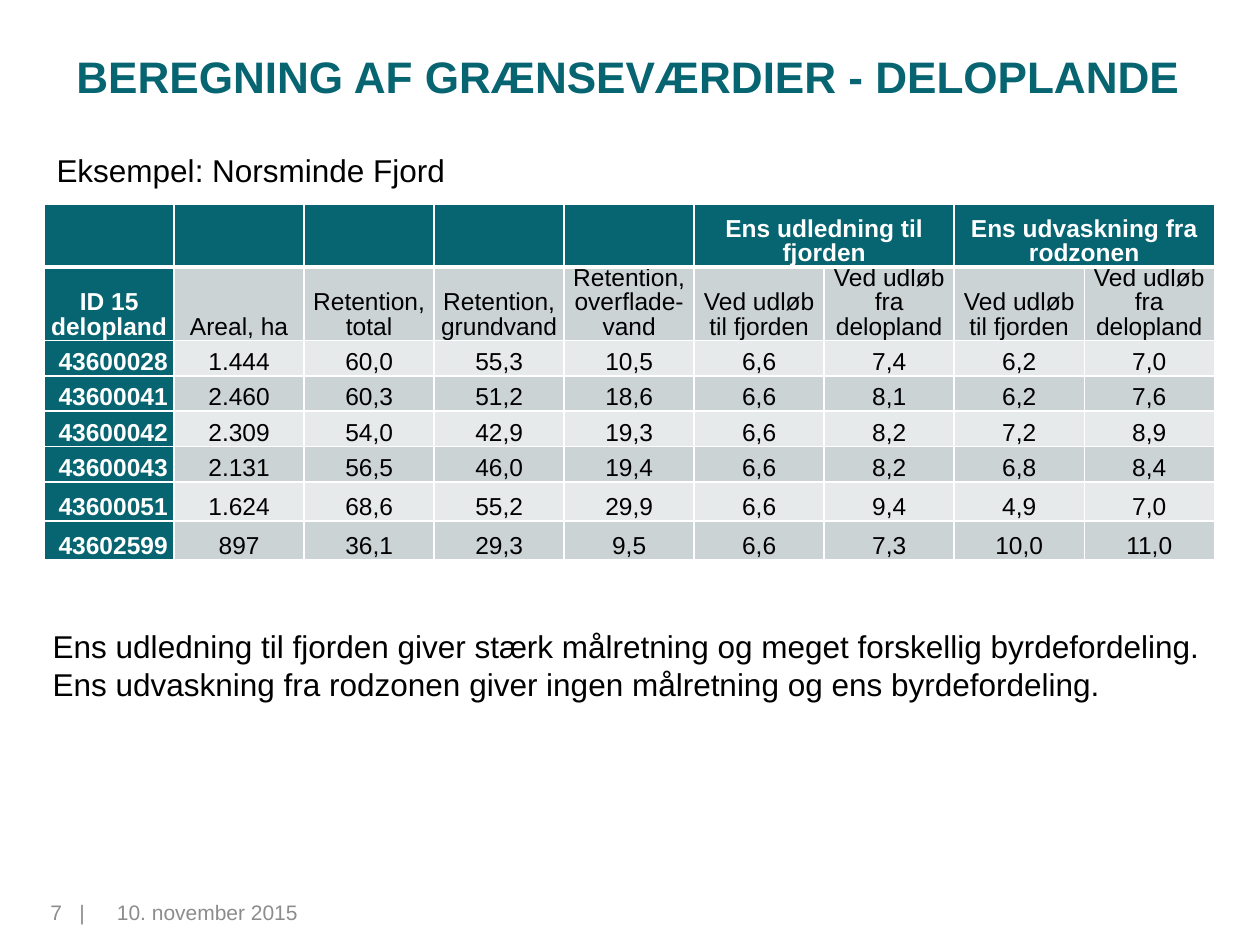
from lxml import etree
from pptx import Presentation
from pptx.dml.color import RGBColor
from pptx.enum import text
from pptx.oxml import ns
from pptx.util import Inches, Pt

TEAL = RGBColor(0x07, 0x64, 0x71)
BAND_DARK = RGBColor(0xCC, 0xD3, 0xD5)
BAND_LIGHT = RGBColor(0xE7, 0xEA, 0xEB)
GREY = RGBColor(0x8C, 0x8C, 0x8C)
BLACK = RGBColor(0, 0, 0)
WHITE = RGBColor(0xFF, 0xFF, 0xFF)
LEFT, CENTER, RIGHT = text.PP_ALIGN.LEFT, text.PP_ALIGN.CENTER, text.PP_ALIGN.RIGHT

GROUPS = {5: "Ens udledning til fjorden", 7: "Ens udvaskning fra rodzonen"}
OUTLETS = ["Ved udløb til fjorden", "Ved udløb fra delopland"]
HEADINGS = ["ID 15 delopland", "Areal, ha", "Retention, total", "Retention, grundvand",
            "Retention, overflade-vand"] + OUTLETS * 2
CATCHMENTS = [
    ["43600028", "1.444", "60,0", "55,3", "10,5", "6,6", "7,4", "6,2", "7,0"],
    ["43600041", "2.460", "60,3", "51,2", "18,6", "6,6", "8,1", "6,2", "7,6"],
    ["43600042", "2.309", "54,0", "42,9", "19,3", "6,6", "8,2", "7,2", "8,9"],
    ["43600043", "2.131", "56,5", "46,0", "19,4", "6,6", "8,2", "6,8", "8,4"],
    ["43600051", "1.624", "68,6", "55,2", "29,9", "6,6", "9,4", "4,9", "7,0"],
    ["43602599", "897", "36,1", "29,3", "9,5", "6,6", "7,3", "10,0", "11,0"],
]
ROW_HEIGHTS = [0.5, 0.57] + [0.28] * 4 + [0.31] * 2


def write(tf, *lines, size=18, color=BLACK, bold=False, align=LEFT, spacing=None):
    for i, line in enumerate(lines):
        p = tf.add_paragraph() if i else tf.paragraphs[0]
        p.alignment = align
        if spacing:
            p.line_spacing = spacing
        r = p.add_run()
        r.text = line
        r.font.name, r.font.size = "Arial", Pt(size)
        r.font.bold, r.font.color.rgb = bold, color


def add_text(s, x, y, w, h, *lines, wrap=True, anchor=text.MSO_ANCHOR.TOP, **fmt):
    tf = s.shapes.add_textbox(x, y, w, h).text_frame
    tf.word_wrap = wrap
    tf.vertical_anchor = anchor
    write(tf, *lines, **fmt)
    return tf


def set_borders(cell, **widths):
    """Draw white borders; widths in points are keyed by side: L, R, T, B."""
    tcPr = cell._tc.get_or_add_tcPr()
    for i, (side, width) in enumerate(widths.items()):
        ln = etree.Element(ns.qn(f"a:ln{side}"), w=str(Pt(width)))
        fill = etree.SubElement(ln, ns.qn("a:solidFill"))
        etree.SubElement(fill, ns.qn("a:srgbClr"), val=str(WHITE))
        tcPr.insert(i, ln)


def add_limits_table(s, x, y, w, h):
    group_row = [GROUPS.get(c, "") for c in range(len(HEADINGS))]
    rows = [group_row, HEADINGS] + CATCHMENTS
    table = s.shapes.add_table(len(rows), len(HEADINGS), x, y, w, h).table
    for col in table.columns:
        col.width = w // len(HEADINGS)
    for row, height in zip(table.rows, ROW_HEIGHTS):
        row.height = Inches(height)
    for c in GROUPS:
        table.cell(0, c).merge(table.cell(0, c + 1))

    for i, values in enumerate(rows):
        for j, value in enumerate(values):
            cell = table.cell(i, j)
            header = i == 0 or j == 0
            cell.margin_left = cell.margin_right = Inches(0.05)
            cell.margin_top = cell.margin_bottom = 0
            cell.vertical_anchor = text.MSO_ANCHOR.BOTTOM
            cell.fill.solid()
            cell.fill.fore_color.rgb = TEAL if header else (BAND_LIGHT, BAND_DARK)[i % 2]
            set_borders(cell, L=1, R=1, T=3 if i == 1 else 1, B=3 if i == 0 else 1)
            if value:
                write(cell.text_frame, value, size=14, bold=header,
                      color=WHITE if header else BLACK, spacing=Pt(14),
                      align=RIGHT if j == 0 and i > 1 else CENTER)


def add_footer(s, x, y, w, h):
    number_w = Inches(0.78)
    tf = add_text(s, x, y, number_w, h, "7\t|", size=12, color=GREY)
    tf.margin_left, tf.margin_right = Inches(0.4), 0
    tabs = etree.SubElement(tf.paragraphs[0]._p.get_or_add_pPr(), ns.qn("a:tabLst"))
    etree.SubElement(tabs, ns.qn("a:tab"), pos=str(Inches(0.23)), algn="l")
    date_x = x + Inches(0.83)
    add_text(s, date_x, y, x + w - date_x, h, "10. november 2015", size=12, color=GREY)


def main():
    prs = Presentation()
    prs.slide_width, prs.slide_height = Inches(10), Inches(7.5)
    s = prs.slides.add_slide(prs.slide_layouts[6])
    add_text(s, Inches(0.18), Inches(0.29), Inches(9.61), Inches(0.63),
             "BEREGNING AF GRÆNSEVÆRDIER - DELOPLANDE", size=25.2, color=TEAL,
             bold=True, align=CENTER, anchor=text.MSO_ANCHOR.MIDDLE)
    add_text(s, Inches(0.35), Inches(1.15), Inches(3.32), Inches(0.4),
             "Eksempel: Norsminde Fjord", wrap=False)
    add_limits_table(s, Inches(0.35), Inches(1.62), Inches(9.29), Inches(2.83))
    add_text(s, Inches(0.32), Inches(4.93), Inches(9.39), Inches(0.71),
             "Ens udledning til fjorden giver stærk målretning og meget forskellig byrdefordeling.",
             "Ens udvaskning fra rodzonen giver ingen målretning og ens byrdefordeling.",
             wrap=False)
    add_footer(s, Inches(0), Inches(7.09), Inches(3.16), Inches(0.4))
    prs.save("out.pptx")


if __name__ == "__main__":
    main()
